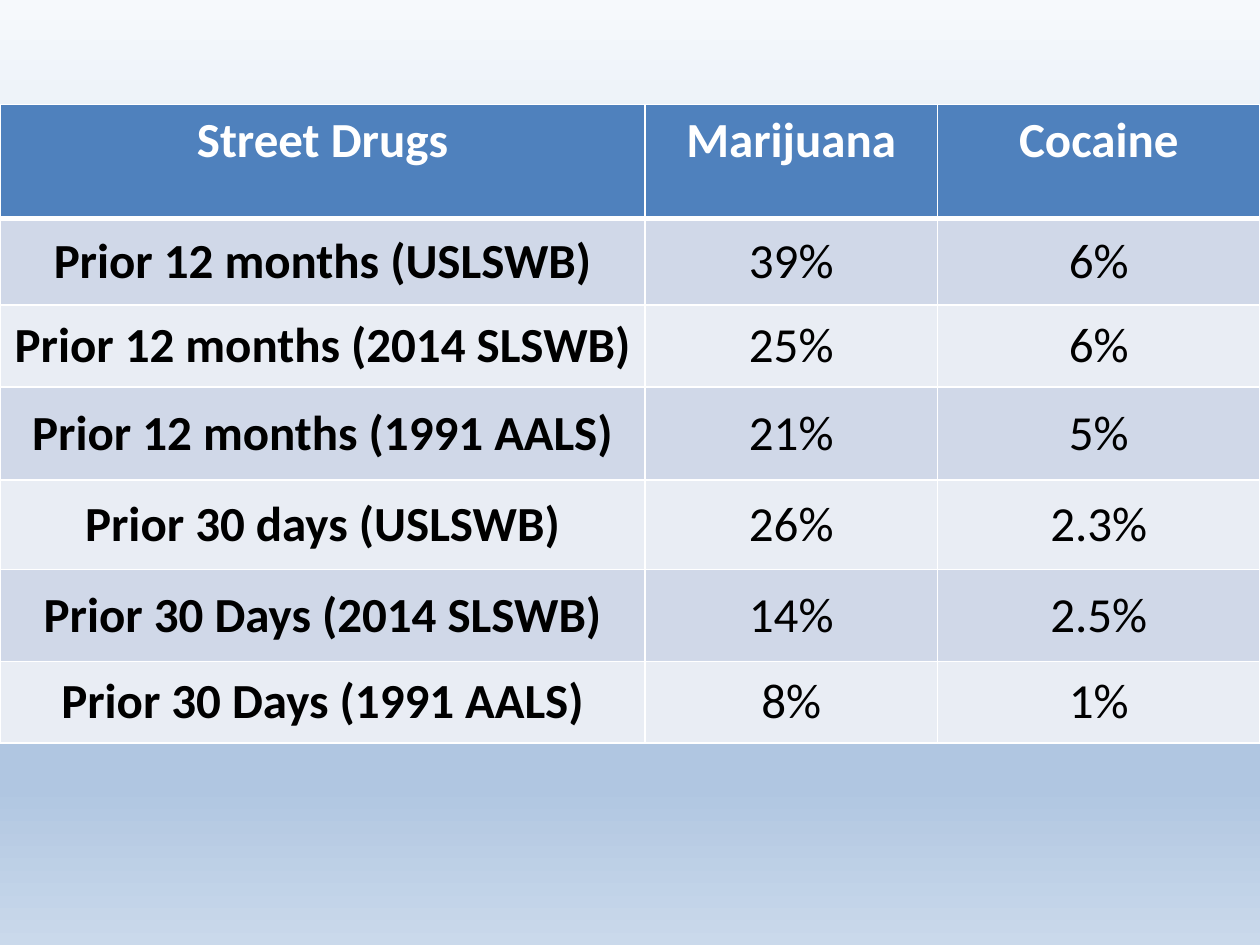
"""Build a slide with a table of street drug use by survey and period."""
from pptx import Presentation
from pptx.dml.color import RGBColor
from pptx.enum.text import MSO_ANCHOR, PP_ALIGN
from pptx.oxml import parse_xml
from pptx.oxml.ns import nsdecls
from pptx.util import Cm, Pt

COLORS = {"header": "4F81BD", "odd": "D0D8E8", "even": "E9EDF4",
          "light": "FFFFFF", "dark": "000000"}
GRADIENT = [(0, "F6F9FC"), (74, "B0C6E1"), (83, "B0C6E1"), (100, "CAD9EB")]
ROWS = [
    ("Street Drugs", "Marijuana", "Cocaine"),
    ("Prior 12 months (USLSWB)", "39%", "6%"),
    ("Prior 12 months (2014 SLSWB)", "25%", "6%"),
    ("Prior 12 months (1991 AALS)", "21%", "5%"),
    ("Prior 30 days (USLSWB)", "26%", "2.3%"),
    ("Prior 30 Days (2014 SLSWB)", "14%", "2.5%"),
    ("Prior 30 Days (1991 AALS)", "8%", "1%"),
]
COL_WIDTHS = [13, 5.9, 6.5]
ROW_HEIGHTS = [2.29, 1.75, 1.65, 1.88, 1.8, 1.85, 1.65]
TABLE_TOP = 2.11


def set_background(s):
    stops = "".join(f'<a:gs pos="{pos * 1000}"><a:srgbClr val="{color}"/></a:gs>'
                    for pos, color in GRADIENT)
    s.element.cSld.insert(0, parse_xml(
        f'<p:bg {nsdecls("p", "a")}><p:bgPr><a:gradFill rotWithShape="1">'
        f'<a:gsLst>{stops}</a:gsLst><a:lin ang="5400000" scaled="0"/>'
        '</a:gradFill><a:effectLst/></p:bgPr></p:bg>'))


def set_borders(cell, widths):
    tc_pr = cell._tc.get_or_add_tcPr()
    for i, (side, width) in enumerate(widths.items()):
        tc_pr.insert(i, parse_xml(
            f'<a:ln{side} {nsdecls("a")} w="{Pt(width)}"><a:solidFill>'
            f'<a:srgbClr val="{COLORS["light"]}"/></a:solidFill></a:ln{side}>'))


def format_cell(cell, text, row, col):
    header = row == 0
    fill = "header" if header else "odd" if row % 2 else "even"
    cell.fill.solid()
    cell.fill.fore_color.rgb = RGBColor.from_string(COLORS[fill])
    cell.vertical_anchor = MSO_ANCHOR.TOP if header else MSO_ANCHOR.MIDDLE
    set_borders(cell, {"L": 1, "R": 1, "T": 3 if row == 1 else 1,
                       "B": 3 if header else 1})
    p = cell.text_frame.paragraphs[0]
    p.text = text
    p.alignment = PP_ALIGN.CENTER
    font = p.runs[0].font
    font.name, font.size = "Calibri", Pt(28)
    font.bold = header or col == 0
    font.color.rgb = RGBColor.from_string(COLORS["light" if header else "dark"])


def main():
    prs = Presentation()
    prs.slide_width, prs.slide_height = Cm(25.4), Cm(19.05)
    s = prs.slides.add_slide(prs.slide_layouts[6])
    set_background(s)
    table = s.shapes.add_table(len(ROWS), len(COL_WIDTHS), Cm(0), Cm(TABLE_TOP),
                               Cm(sum(COL_WIDTHS)), Cm(sum(ROW_HEIGHTS))).table
    for column, width in zip(table.columns, COL_WIDTHS):
        column.width = Cm(width)
    for i, (values, height) in enumerate(zip(ROWS, ROW_HEIGHTS)):
        table.rows[i].height = Cm(height)
        for j, text in enumerate(values):
            format_cell(table.cell(i, j), text, i, j)
    prs.save("out.pptx")


if __name__ == "__main__":
    main()
